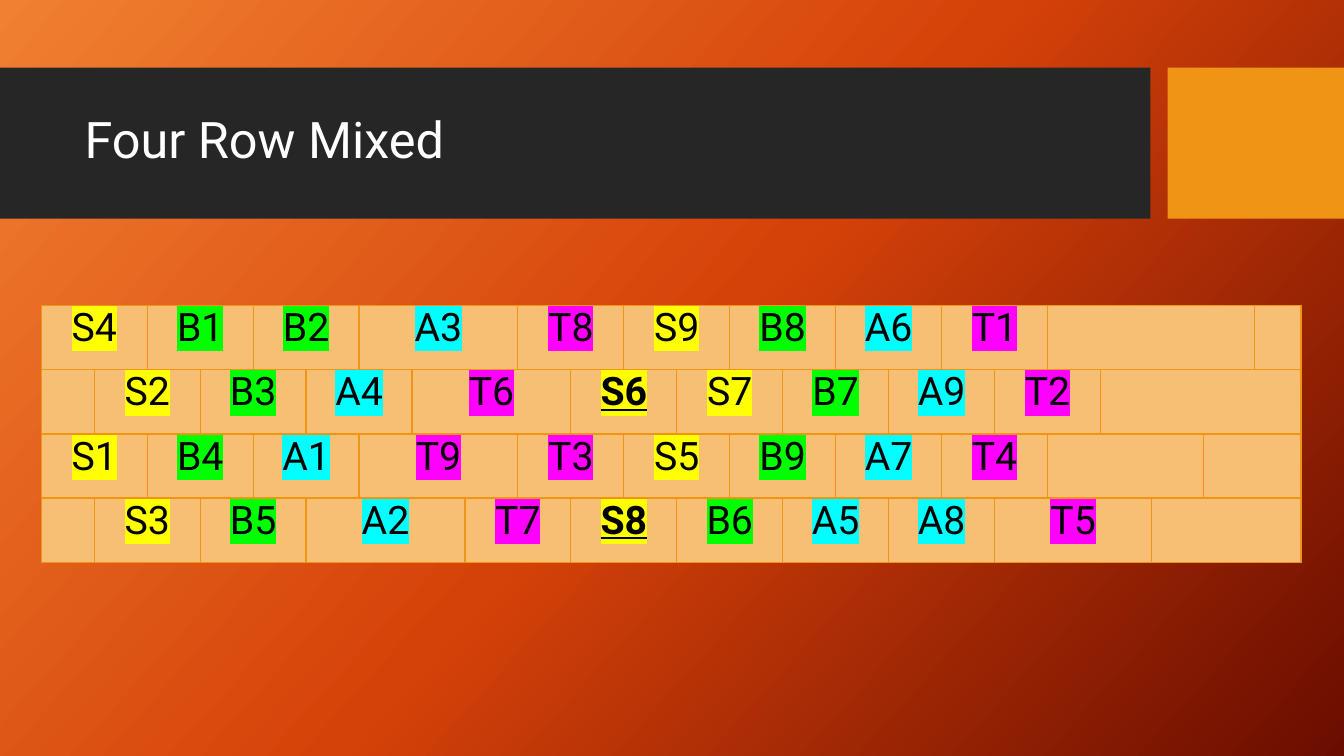
from dataclasses import dataclass

from pptx import Presentation
from pptx.dml.color import RGBColor as RGB
from pptx.enum.shapes import MSO_SHAPE as Shape
from pptx.enum.text import MSO_ANCHOR as Anchor, PP_ALIGN as Align
from pptx.oxml.ns import qn
from pptx.util import Inches, Pt
from lxml.etree import SubElement as Sub

WIDE, HIGH = 13.33, 7.5


@dataclass(frozen=True)
class Theme:
    font: str = "Roboto"
    white: str = "FFFFFF"
    ink: str = "000000"
    band: str = "262626"
    gold: str = "F09415"
    sand: str = "F6BF73"
    glow: tuple = ((0, "F18031"), (50, "D54209"), (100, "6A0D00"))
    angle: int = 42
    title: int = 36
    code: int = 28
    thin: int = 1
    thick: int = 2


MARKS = {"S": "FFFF00", "B": "00FF00", "A": "00FFFF", "T": "FF00FF"}

# Each item is a code and its span in columns (two if not given); "-" is empty.
ROWS = [
    "S4 B1 B2 A3:3 T8 S9 B8 A6 T1 -:4 -:1",
    "-:1 S2 B3 A4 T6:3 S6* S7 B7 A9 T2 -:4",
    "S1 B4 A1 T9:3 T3 S5 B9 A7 T4 -:3 -:2",
    "-:1 S3 B5 A2:3 T7 S8* B6 A5 A8 T5:3 -:3",
]
COLS = [10.51 / 20] * 20 + [0.51] * 3 + [0.46]


def put(obj, values):
    for name, value in values.items():
        setattr(obj, name, value)


def tint(parent, tag, hue):
    node = Sub(parent, qn(tag))
    Sub(node, qn("a:srgbClr"), val=hue)
    return node


class Deck:
    """Style and current slide; boxes are given as inches of the slide."""

    def __init__(self, theme):
        self.theme = theme
        self.show = Presentation()
        put(self.show, {"slide_width": Inches(WIDE), "slide_height": Inches(HIGH)})
        self.slide = self.show.slides.add_slide(self.show.slide_layouts[6])

    def back(self):
        fill = self.slide.background.fill
        fill.gradient()
        fill.gradient_angle = 360 - self.theme.angle
        stops = next(self.slide.element.iter(qn("a:gsLst")))
        stops.clear()
        for share, hue in self.theme.glow:
            tint(stops, "a:gs", hue).set("pos", str(share * 1000))

    def rect(self, box, hue):
        shape = self.slide.shapes.add_shape(Shape.RECTANGLE, *map(Inches, box))
        shape.shadow.inherit = False
        shape.fill.solid()
        shape.fill.fore_color.rgb = RGB.from_string(hue)
        shape.line.fill.background()

    def word(self, para, text, hue, mark=None, **style):
        run = para.add_run()
        run.text = text
        run.font.color.rgb = RGB.from_string(hue)
        if mark:
            props = run._r.get_or_add_rPr()
            light = tint(props, "a:highlight", mark)
            props.find(qn("a:solidFill")).addnext(light)
        put(run.font, {"name": self.theme.font, **style})

    def head(self, box, text):
        frame = self.slide.shapes.add_textbox(*map(Inches, box)).text_frame
        put(frame, {"word_wrap": True, "vertical_anchor": Anchor.MIDDLE})
        para = frame.paragraphs[0]
        para.line_spacing = 0.9
        self.word(para, text, self.theme.white, size=Pt(self.theme.title))

    def edge(self, cell, top, low):
        """Draw the four borders ahead of the cell's fill."""
        props = cell._tc.get_or_add_tcPr()
        sides = zip("LRTB", (self.theme.thin, self.theme.thin, top, low))
        for spot, (side, size) in enumerate(sides):
            line = Sub(props, qn(f"a:ln{side}"), w=str(Pt(size)))
            tint(line, "a:solidFill", self.theme.gold)
            props.insert(spot, line)

    def label(self, cell, item):
        put(cell, {"margin_left": Inches(0.07), "margin_right": Inches(0.07),
                   "margin_top": 0, "margin_bottom": 0})
        para = cell.text_frame.paragraphs[0]
        para.alignment = Align.CENTER
        style = {"size": Pt(self.theme.code)}
        if item.endswith("*"):
            style.update(bold=True, underline=True)
        self.word(para, item.rstrip("*"), self.theme.ink, MARKS[item[0]], **style)

    def grid(self, box, cols, rows):
        frame = self.slide.shapes.add_table(len(rows), len(cols), *map(Inches, box))
        table = frame.table
        put(table, {"first_row": False, "horz_banding": False})
        for col, wide in zip(table.columns, cols):
            col.width = Inches(wide)
        last = len(rows) - 1
        for y, row in enumerate(rows):
            table.rows[y].height = Inches(box[3] / len(rows))
            top = self.theme.thick if y == last else self.theme.thin
            low = self.theme.thick if y == last - 1 else self.theme.thin
            for x in range(len(cols)):
                cell = table.cell(y, x)
                cell.fill.solid()
                cell.fill.fore_color.rgb = RGB.from_string(self.theme.sand)
                self.edge(cell, top, low)
            x = 0
            for part in row.split():
                item, _, span = part.partition(":")
                span = int(span or 2)
                cell = table.cell(y, x)
                if span > 1:
                    cell.merge(table.cell(y, x + span - 1))
                if item != "-":
                    self.label(cell, item)
                x += span


def main():
    theme = Theme()
    deck = Deck(theme)
    deck.back()
    deck.rect((0, 0.67, 11.41, 1.5), theme.band)
    deck.rect((11.58, 0.67, 1.75, 1.5), theme.gold)
    deck.head((0.74, 0.82, 10.51, 1.18), "Four Row Mixed")
    deck.grid((0.41, 3.03, sum(COLS), 2.55), COLS, ROWS)
    deck.show.save("out.pptx")


if __name__ == "__main__":
    main()
